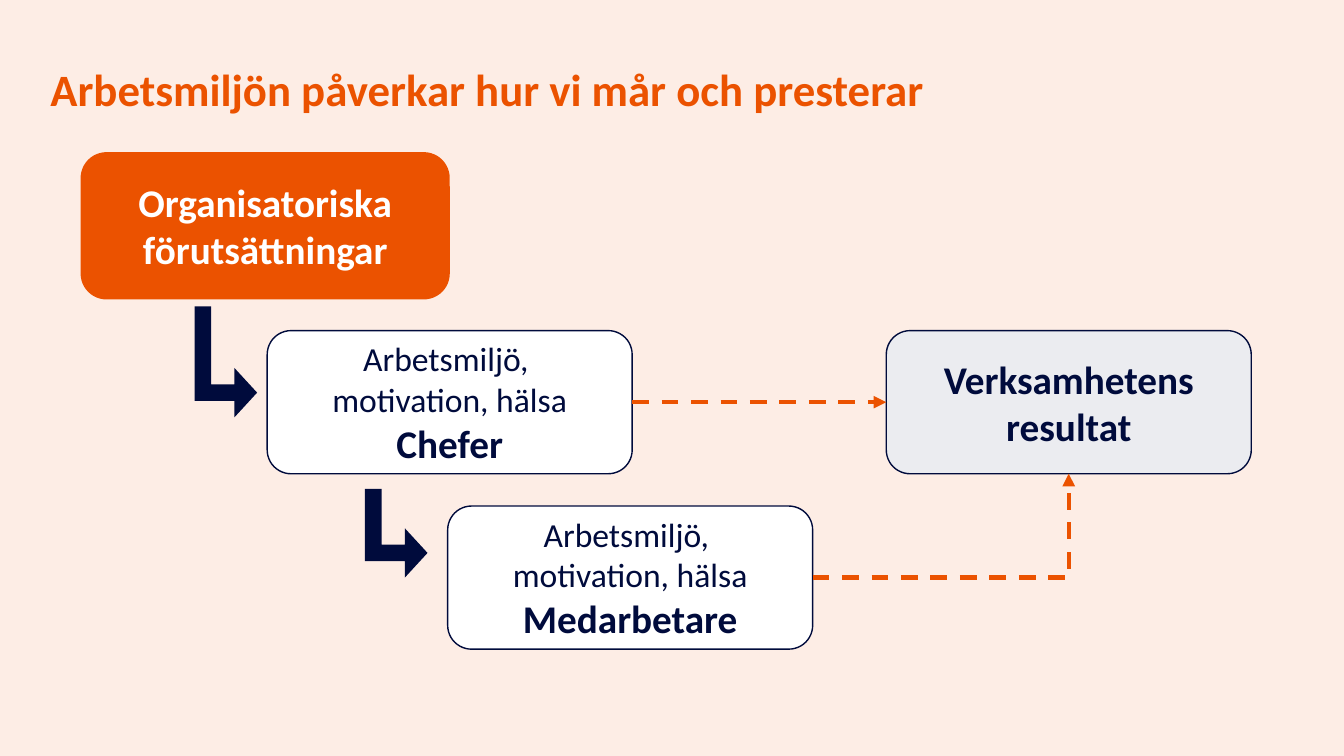
from pptx import Presentation
from pptx.dml.color import RGBColor
from pptx.enum.dml import MSO_LINE
from pptx.enum.shapes import MSO_CONNECTOR as Link, MSO_SHAPE as Shape
from pptx.enum.text import MSO_ANCHOR as Anchor, PP_ALIGN as Align
from pptx.oxml.ns import qn
from pptx.util import Inches, Pt
from lxml.etree import SubElement

ORANGE, NAVY, WHITE, GREY, PEACH = "EB5200", "000B3C", "FFFFFF", "EBECF0", "FDEDE5"
RIGHT, LEFT, BOTTOM = 3, 1, 2  # connection sites of a rounded box


def color(code):
    return RGBColor.from_string(code)


class Board:
    face = "Calibri"
    box_size = Inches(3.62), Inches(1.42)

    def __init__(self, deck):
        self.slide = deck.slides.add_slide(deck.slide_layouts[5])
        back = self.slide.background.fill
        back.solid()
        back.fore_color.rgb = color(PEACH)

    def style(self, para, size, ink, bold):
        font = para.font
        font.name, font.size, font.bold = self.face, Pt(size), bold
        font.color.rgb = color(ink)

    def title(self, text):
        hold = self.slide.shapes.title
        hold.left, hold.top = Inches(0.4), Inches(0.52)
        hold.width, hold.height = Inches(12.56), Inches(0.79)
        frame = hold.text_frame
        frame.text = text
        frame.vertical_anchor = Anchor.MIDDLE
        para = frame.paragraphs[0]
        para.alignment, para.line_spacing = Align.LEFT, 0.9
        self.style(para, 32, ORANGE, True)

    def paint(self, shape, fill):
        shape.shadow.inherit = False
        shape.fill.solid()
        shape.fill.fore_color.rgb = color(fill)

    def box(self, x, y, lines, fill, edge=NAVY, width=1, ink=NAVY):
        """Draw a rounded box; the last line is bold and larger."""
        shape = self.slide.shapes.add_shape(
            Shape.ROUNDED_RECTANGLE, Inches(x), Inches(y), *self.box_size)
        self.paint(shape, fill)
        shape.line.color.rgb = color(edge)
        shape.line.width = Pt(width)
        frame = shape.text_frame
        frame.word_wrap, frame.vertical_anchor = True, Anchor.MIDDLE
        for i, text in enumerate(lines):
            para = frame.add_paragraph() if i else frame.paragraphs[0]
            para.text, para.alignment = text, Align.CENTER
            last = i == len(lines) - 1
            self.style(para, 28 if last else 24, ink, last)
        return shape

    def step(self, x, y, width):
        """Draw a bent block arrow that leads down and to the right."""
        shape = self.slide.shapes.add_shape(
            Shape.BENT_UP_ARROW, Inches(x), Inches(y), Inches(width), Inches(0.62))
        shape.rotation = 90
        for i, part in enumerate((0.265, 0.394, 0.363)):
            shape.adjustments[i] = part
        self.paint(shape, NAVY)
        shape.line.fill.background()

    def link(self, start, end, site, kind=Link.STRAIGHT):
        line = self.slide.shapes.add_connector(kind, 0, 0, 0, 0)
        line.begin_connect(start, RIGHT)
        line.end_connect(end, site)
        line.line.color.rgb = color(ORANGE)
        line.line.width = Pt(3)
        line.line.dash_style = MSO_LINE.DASH
        props = line._element.spPr
        SubElement(props.find(qn("a:ln")), qn("a:tailEnd"), type="triangle")
        SubElement(props, qn("a:effectLst"))
        if kind == Link.ELBOW:  # a single corner
            props.find(qn("a:prstGeom")).set("prst", "bentConnector2")


def main():
    deck = Presentation()
    deck.slide_width, deck.slide_height = Inches(13.33), Inches(7.5)
    board = Board(deck)
    board.title("Arbetsmiljön påverkar hur vi mår och presterar")

    # Boxes
    health = "Arbetsmiljö, \vmotivation, hälsa"
    chiefs = board.box(2.65, 3.28, [health, "Chefer"], WHITE)
    staff = board.box(4.44, 5.02, [health, "Medarbetare"], WHITE)
    result = board.box(8.79, 3.28, ["Verksamhetens resultat"], GREY)
    board.box(0.82, 1.53, ["Organisatoriska förutsättningar"], ORANGE, ORANGE, 3, WHITE)

    # Steps down
    board.step(1.69, 3.28, 1.1)
    board.step(3.49, 4.98, 0.88)

    # Links to the result
    board.link(chiefs, result, LEFT)
    board.link(staff, result, BOTTOM, Link.ELBOW)

    deck.save("out.pptx")


if __name__ == "__main__":
    main()
